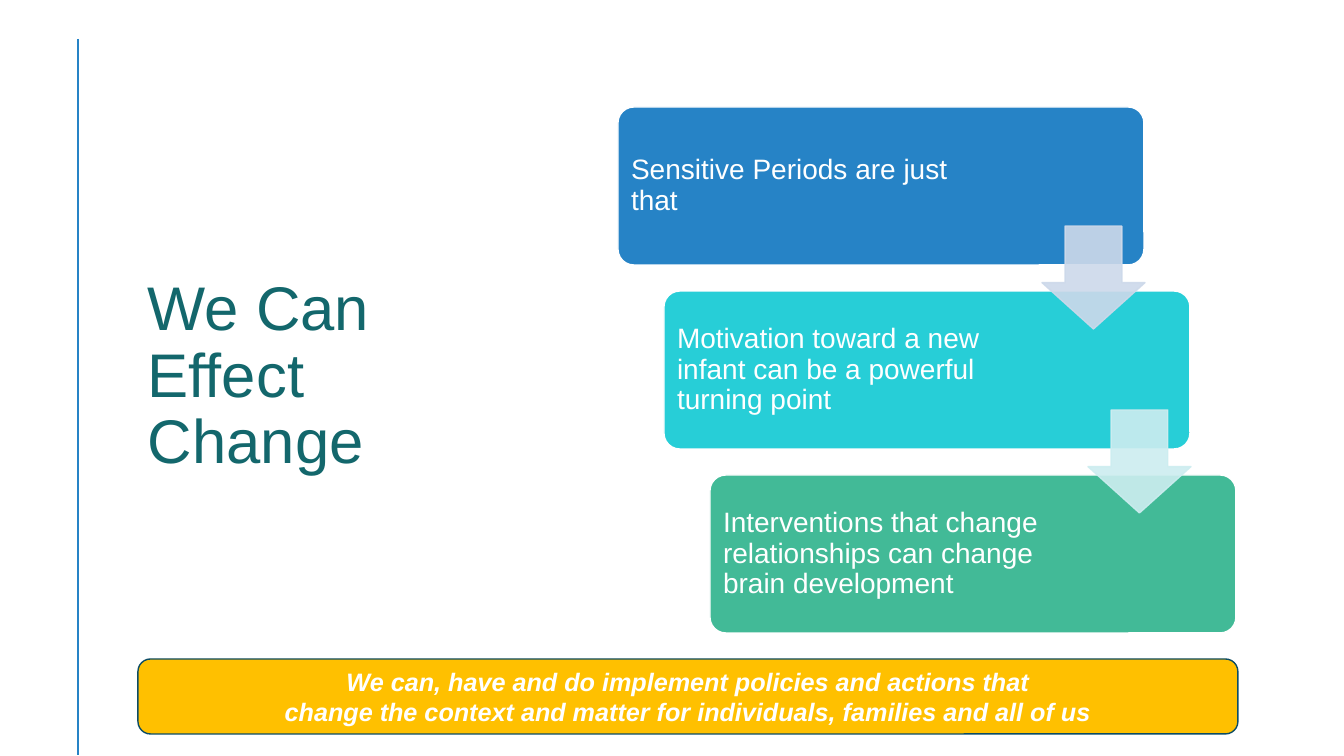
import pptx
import pptx.util
import pptx.dml.color
import pptx.enum.shapes
import pptx.enum.text
import pptx.oxml
import pptx.oxml.ns

PX = 914400 / 100.8
SHAPE = pptx.enum.shapes.MSO_SHAPE
ALIGN = pptx.enum.text.PP_ALIGN

TITLE = "We Can Effect Change"
# text, fill, text width
STEPS = [
    ("Sensitive Periods are just that", "2683C6", 356),
    ("Motivation toward a new infant can be a powerful turning point", "27CED7", 368),
    ("Interventions that change relationships can change brain development", "42BA97", 368),
]
ARROW_COLORS = ["CDD9EA", "CDEDF0"]
BANNER = [
    "We can, have and do implement policies and actions that",
    "change the context and matter for individuals, families and all of us",
]
STEP_LEFT, STEP_TOP, STEP_W, STEP_H = 618, 107, 526, 158
STEP_DX, STEP_DY = 46, 184
TEXT_INSET = 5
ARROW_LEFT, ARROW_TOP, ARROW_SIZE = 1042, 226, 103


def emu(*lengths):
    return [pptx.util.Emu(round(n * PX)) for n in lengths]


def rgb(color):
    return pptx.dml.color.RGBColor.from_string(color)


def set_alpha(fill_format, percent):
    """Make a solid fill partly transparent."""
    color = fill_format._xPr.find(".//" + pptx.oxml.ns.qn("a:srgbClr"))
    alpha = pptx.oxml.parse_xml(
        f'<a:alpha {pptx.oxml.ns.nsdecls("a")} val="{percent * 1000}"/>')
    color.append(alpha)


def add_block(kind, box, fill, line, adjust=(), alpha=None):
    sp = s.shapes.add_shape(kind, *emu(*box))
    sp.shadow.inherit = False
    for i, value in enumerate(adjust):
        sp.adjustments[i] = value
    for f, color in ((sp.fill, fill), (sp.line.fill, line)):
        f.solid()
        f.fore_color.rgb = rgb(color)
        if alpha:
            set_alpha(f, alpha)
    sp.line.width = pptx.util.Pt(1)
    return sp


def write(sp, *lines, size, color="FFFFFF", bold=False, italic=False,
          align=ALIGN.LEFT, spacing=None, inset=None):
    tf = sp.text_frame
    tf.word_wrap = True
    tf.vertical_anchor = pptx.enum.text.MSO_ANCHOR.MIDDLE
    if inset is not None:
        tf.margin_left, tf.margin_top, tf.margin_right, tf.margin_bottom = emu(*[inset] * 4)
    for i, text in enumerate(lines):
        p = tf.add_paragraph() if i else tf.paragraphs[0]
        p.alignment = align
        p.line_spacing = spacing
        r = p.add_run()
        r.text = text
        r.font.name = "Arial"
        r.font.size = pptx.util.Pt(size)
        r.font.bold = bold
        r.font.italic = italic
        r.font.color.rgb = rgb(color)


prs = pptx.Presentation()
prs.slide_width, prs.slide_height = emu(1344, 756)
s = prs.slides.add_slide(prs.slide_layouts[6])

rule = s.shapes.add_connector(
    pptx.enum.shapes.MSO_CONNECTOR.STRAIGHT, *emu(78, 39, 78, 755))
rule.line.color.rgb = rgb("2683C6")
rule.line.width = pptx.util.Pt(2)
rule._element.spPr.append(
    pptx.oxml.parse_xml(f'<a:effectLst {pptx.oxml.ns.nsdecls("a")}/>'))

title = s.shapes.add_textbox(*emu(138, 120, 386, 515))
write(title, TITLE, size=44, color="13676C", spacing=0.9)

for i, (text, fill, text_w) in enumerate(STEPS):
    x, y = STEP_LEFT + i * STEP_DX, STEP_TOP + i * STEP_DY
    add_block(SHAPE.ROUNDED_RECTANGLE, (x, y, STEP_W, STEP_H), fill, "FFFFFF", [0.1])
    label = s.shapes.add_textbox(
        *emu(x + TEXT_INSET, y + TEXT_INSET, text_w, STEP_H - 2 * TEXT_INSET))
    write(label, text, size=20, spacing=0.9, inset=8)

for i, color in enumerate(ARROW_COLORS):
    box = (ARROW_LEFT + i * STEP_DX, ARROW_TOP + i * STEP_DY, ARROW_SIZE, ARROW_SIZE)
    add_block(SHAPE.DOWN_ARROW, box, color, color, [0.55, 0.45], alpha=90)

banner = add_block(SHAPE.ROUNDED_RECTANGLE, (138, 659, 1100, 75), "FFC000", "0C4C64")
write(banner, *BANNER, size=18, bold=True, italic=True, align=ALIGN.CENTER)

prs.save("out.pptx")
